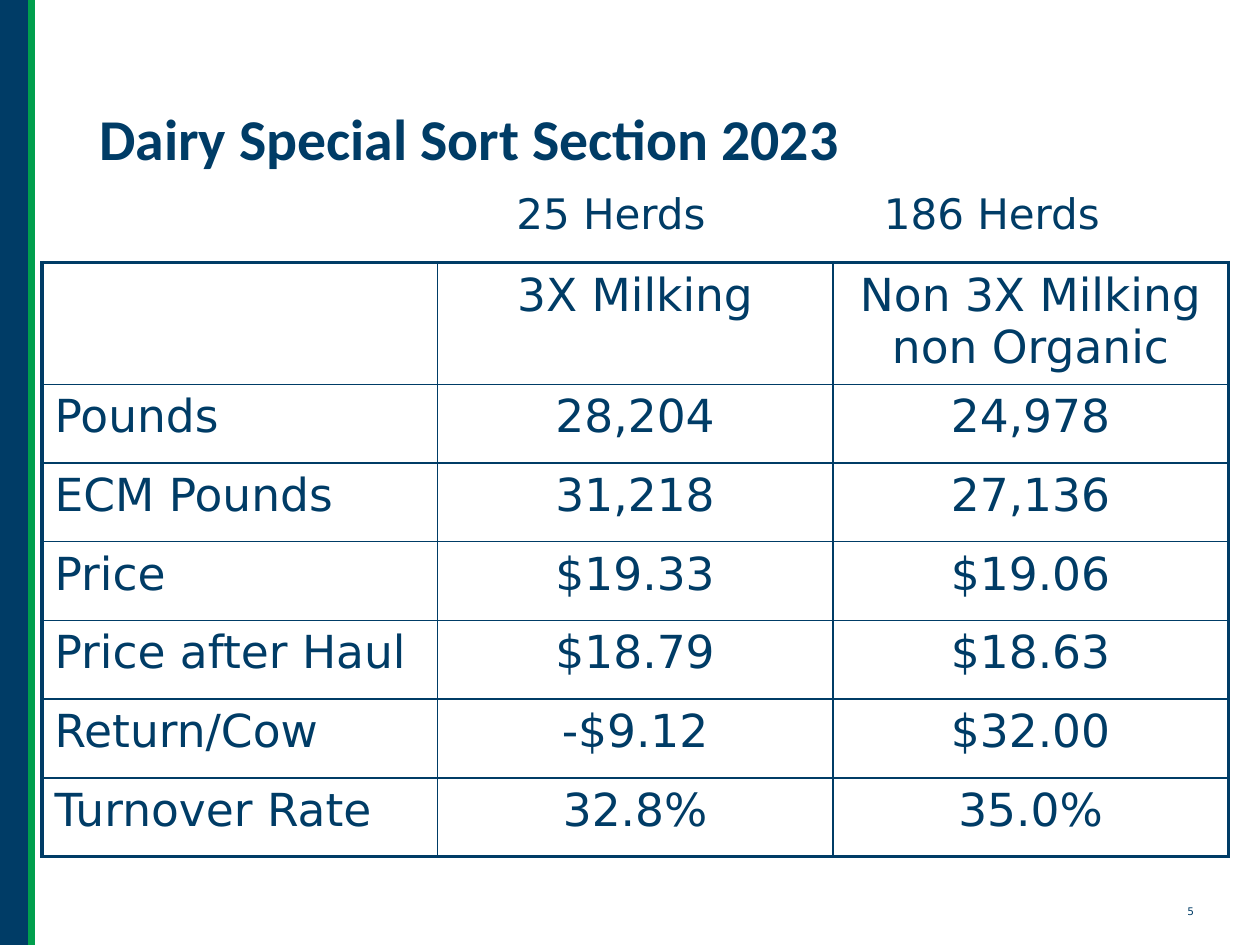
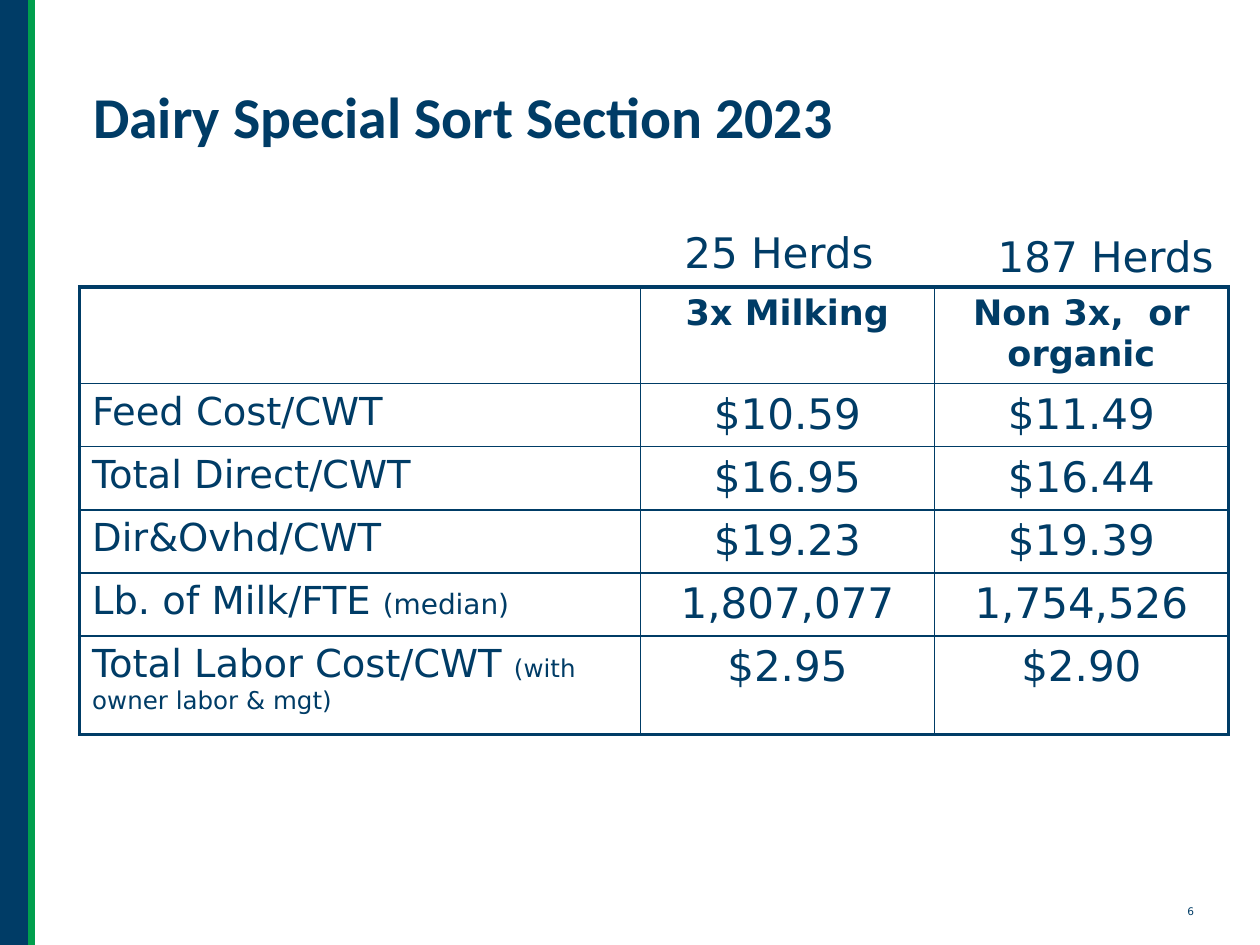
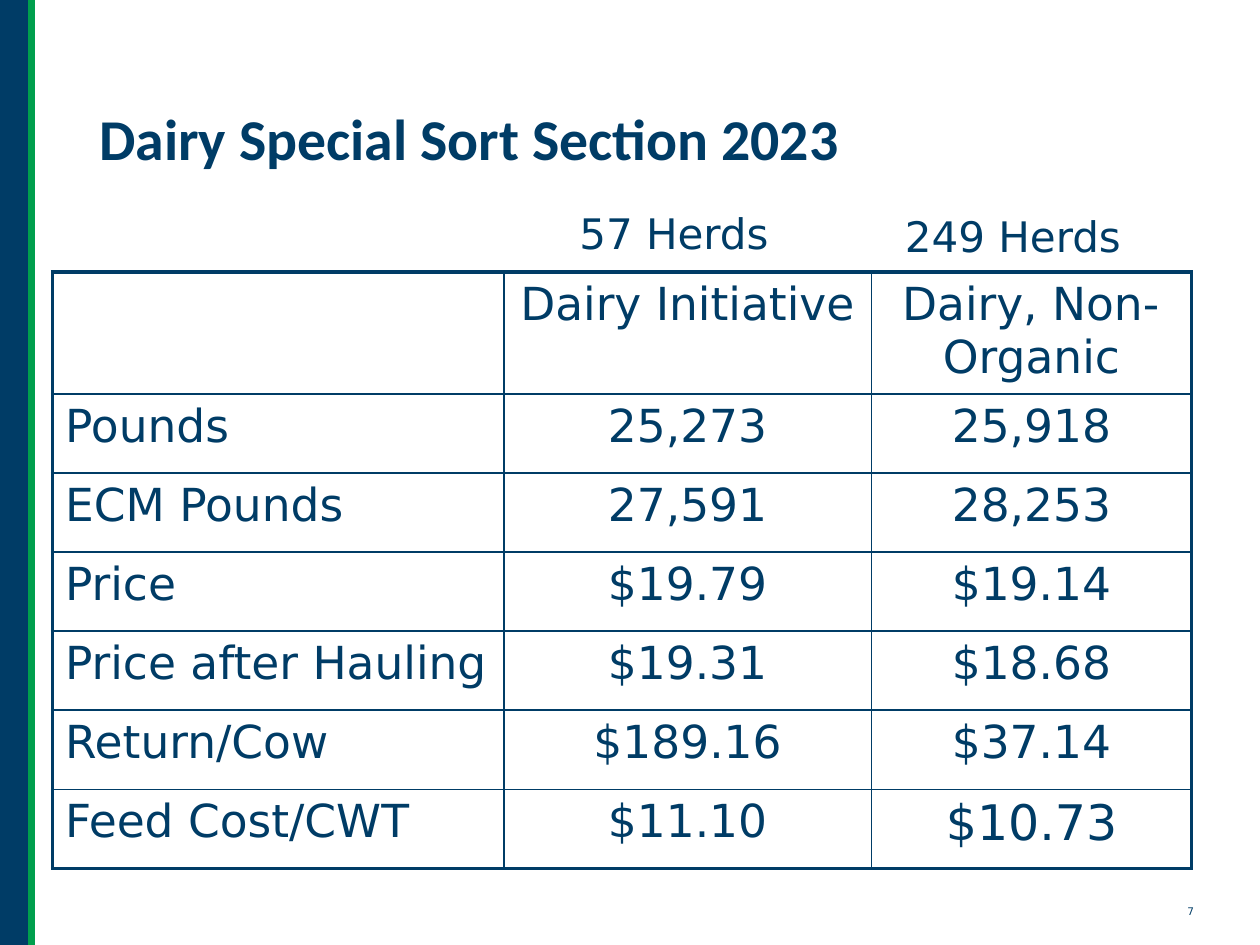
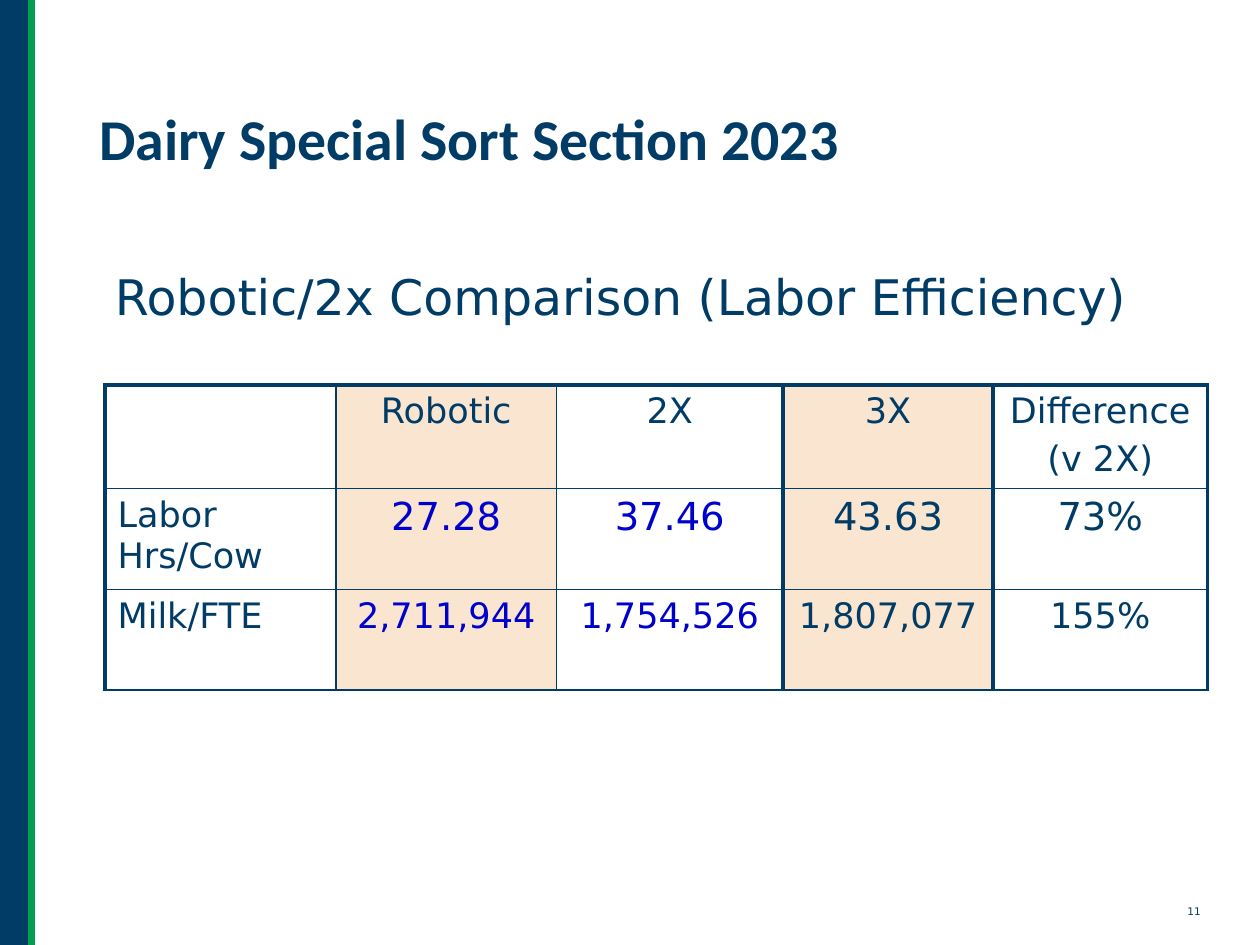
import pptx
import pptx.dml.color
import pptx.enum.shapes
import pptx.enum.text
import pptx.oxml
import pptx.oxml.ns
import pptx.util

Pt = pptx.util.Pt
RGBColor = pptx.dml.color.RGBColor
ALIGN = pptx.enum.text.PP_ALIGN
AUTO_SIZE = pptx.enum.text.MSO_AUTO_SIZE

# Colours, fonts and shared formats
NAVY = RGBColor(0x00, 0x3C, 0x66)
GREEN = RGBColor(0x00, 0x9F, 0x4D)
BLUE = RGBColor(0x00, 0x00, 0xCC)
PEACH = RGBColor(0xF9, 0xE5, 0xD0)
TITLE_FONT = "Calibri"
BODY_FONT = "DejaVu Sans"
TITLE = "Dairy Special Sort Section 2023"
TITLE_BOX = (49.5, 28.5, 621, 104.5)
THICK, THIN = 2.25, 1
TITLE_ONLY = 5


class Deck:
    """Holds the shared style and the slide being built."""

    def __init__(self):
        self.presentation = pptx.Presentation()
        self.presentation.slide_width = Pt(720)
        self.presentation.slide_height = Pt(540)
        self.slide = None

    def add_slide(self, number, title_box=TITLE_BOX):
        layout = self.presentation.slide_layouts[TITLE_ONLY]
        self.slide = self.presentation.slides.add_slide(layout)
        self.side_band()
        self.title(title_box)
        self.text(str(number), (671.5, 513.5, 25, 14.5), 6)

    def side_band(self):
        shapes = self.slide.shapes
        band = shapes.add_shape(
            pptx.enum.shapes.MSO_SHAPE.RECTANGLE, 0, 0, Pt(18), Pt(540))
        band.shadow.inherit = False
        band.fill.solid()
        band.fill.fore_color.rgb = NAVY
        band.line.fill.background()
        edge = shapes.add_connector(
            pptx.enum.shapes.MSO_CONNECTOR.STRAIGHT, Pt(18), Pt(-6), Pt(18), Pt(540))
        edge.line.color.rgb = GREEN
        edge.line.width = Pt(4.5)
        properties = edge._element.spPr
        properties.append(pptx.oxml.parse_xml(
            f'<a:effectLst {pptx.oxml.ns.nsdecls("a")}/>'))

    def add_run(self, paragraph, text, size, color=NAVY, bold=False, name=BODY_FONT):
        font_values = {"name": name, "size": Pt(size), "bold": bold}
        run = paragraph.add_run()
        run.text = text
        for attribute, value in font_values.items():
            setattr(run.font, attribute, value)
        run.font.color.rgb = color

    def title(self, box):
        title = self.slide.shapes.title
        title.left, title.top, title.width, title.height = map(Pt, box)
        frame_values = {
            "word_wrap": True,
            "auto_size": AUTO_SIZE.NONE,
            "vertical_anchor": pptx.enum.text.MSO_ANCHOR.MIDDLE,
        }
        for attribute, value in frame_values.items():
            setattr(title.text_frame, attribute, value)
        paragraph = title.text_frame.paragraphs[0]
        paragraph.alignment = ALIGN.LEFT
        paragraph.line_spacing = 0.9
        self.add_run(paragraph, TITLE, 33, bold=True, name=TITLE_FONT)

    def text(self, text, box, size, wrap=False):
        frame = self.slide.shapes.add_textbox(*map(Pt, box)).text_frame
        frame.word_wrap = wrap
        frame.auto_size = AUTO_SIZE.SHAPE_TO_FIT_TEXT
        self.add_run(frame.paragraphs[0], text, size)

    def herd_count(self, text, left, top):
        self.text(text, (left, top, 15.5 * len(text), 36), 24)

    def table(self, left, top, widths, heights, rows, cell_format,
              thick_columns=(), bottom=THICK, shaded_columns=()):
        """cell_format(row, column) gives the text format of a cell."""
        row_count, column_count = len(heights), len(widths)
        table = self.slide.shapes.add_table(
            row_count, column_count, Pt(left), Pt(top),
            Pt(sum(widths)), Pt(sum(heights))).table
        table.first_row = table.horz_banding = False
        for column, width in zip(table.columns, widths):
            column.width = Pt(width)
        for row, height in zip(table.rows, heights):
            row.height = Pt(height)

        # Line widths at each column and row boundary
        thick = {0, column_count, *thick_columns}
        vertical = [THICK if i in thick else THIN for i in range(column_count + 1)]
        horizontal = [THICK] + [THIN] * (row_count - 1) + [bottom]

        for r, row in enumerate(rows):
            for c, content in enumerate(row):
                cell = table.cell(r, c)
                self.borders(cell, {"L": vertical[c], "R": vertical[c + 1],
                                    "T": horizontal[r], "B": horizontal[r + 1]})
                if c in shaded_columns:
                    cell.fill.solid()
                    cell.fill.fore_color.rgb = PEACH
                else:
                    cell.fill.background()
                self.cell_text(cell, content, cell_format(r, c),
                               ALIGN.CENTER if c else ALIGN.LEFT)

    def cell_text(self, cell, content, text_format, alignment):
        """A content is a string, or a main text with a smaller note and its size."""
        main, note, note_size = content if isinstance(content, tuple) else (content, "", 0)
        frame = cell.text_frame
        for index, line in enumerate(main.split("\n")):
            paragraph = frame.add_paragraph() if index else frame.paragraphs[0]
            paragraph.alignment = alignment
            if index:
                paragraph.space_before = Pt(0.2 * text_format["size"])
            if line:
                self.add_run(paragraph, line, **text_format)
        if note:
            self.add_run(paragraph, note, note_size)

    def borders(self, cell, widths):
        properties = cell._tc.get_or_add_tcPr()
        for side, width in widths.items():
            properties.append(pptx.oxml.parse_xml(
                f'<a:ln{side} {pptx.oxml.ns.nsdecls("a")} w="{Pt(width)}">'
                f'<a:solidFill><a:srgbClr val="{NAVY}"/></a:solidFill></a:ln{side}>'))


def milking_results(deck):
    deck.add_slide(5)
    rows = [
        ("", "3X Milking", "Non 3X Milking non Organic"),
        ("Pounds", "28,204", "24,978"),
        ("ECM Pounds", "31,218", "27,136"),
        ("Price", "$19.33", "$19.06"),
        ("Price after Haul", "$18.79", "$18.63"),
        ("Return/Cow", "-$9.12", "$32.00"),
        ("Turnover Rate", "32.8%", "35.0%"),
    ]
    deck.table(24, 150, [226] * 3, [67.5] + [45] * 6, rows,
               lambda row, column: {"size": 26})
    deck.herd_count("25 Herds", 288, 103.5)
    deck.herd_count("186 Herds", 498, 103.5)


def milking_costs(deck):
    deck.add_slide(6, (46, 41.5, 630, 54))
    rows = [
        ("", "3x Milking", "Non 3x,  or organic"),
        ("Feed Cost/CWT", "$10.59", "$11.49"),
        ("Total Direct/CWT", "$16.95", "$16.44"),
        ("Dir&Ovhd/CWT", "$19.23", "$19.39"),
        (("Lb. of Milk/FTE ", "(median)", 16), "1,807,077", "1,754,526"),
        (("Total Labor Cost/CWT ", "(with owner labor & mgt)", 14), "$2.95", "$2.90"),
    ]

    def cell_format(row, column):
        if row == 0:
            return {"size": 20, "bold": True}
        return {"size": 24 if column else 22}

    deck.table(45.5, 164, [320.5, 168, 168], [54] + [35.2] * 4 + [56.5], rows, cell_format)
    deck.herd_count("25 Herds", 384, 126)
    deck.herd_count("187 Herds", 563, 128)


def initiative_results(deck):
    deck.add_slide(7)
    rows = [
        ("", "Dairy Initiative", "Dairy, Non-Organic"),
        ("Pounds", "25,273", "25,918"),
        ("ECM Pounds", "27,591", "28,253"),
        ("Price", "$19.79", "$19.14"),
        ("Price after Hauling", "$19.31", "$18.68"),
        ("Return/Cow", "$189.16", "$37.14"),
        ("Feed Cost/CWT", "$11.10", "$10.73"),
    ]
    deck.table(30, 155.5, [258, 210, 183], [67.5] + [45.2] * 6, rows,
               lambda row, column: {"size": 28 if (row, column) == (6, 2) else 26})
    deck.herd_count("57 Herds", 324, 115)
    deck.herd_count("249 Herds", 510, 116.5)


def labor_efficiency(deck):
    deck.add_slide(11)
    rows = [
        ("", "Robotic", "2X", "3X", "Difference\n(v 2X)"),
        ("Labor Hrs/Cow", "27.28", "37.46", "43.63", "73%"),
        ("Milk/FTE", "2,711,944", "1,754,526", "1,807,077", "155%"),
    ]

    def cell_format(row, column):
        return {"size": 22 if row == 1 and column else 20,
                "color": BLUE if row and column in (1, 2) else NAVY}

    deck.table(60, 220, [132, 126, 129.5, 120, 122.5], [57.5] * 3, rows, cell_format,
               thick_columns=(3, 4), bottom=THIN, shaded_columns=(1, 3))
    deck.text("Robotic/2x Comparison (Labor Efficiency)", (58.5, 149, 630, 41), 28, wrap=True)


def main():
    deck = Deck()
    for build in (milking_results, milking_costs, initiative_results, labor_efficiency):
        build(deck)
    deck.presentation.save("out.pptx")


if __name__ == "__main__":
    main()
